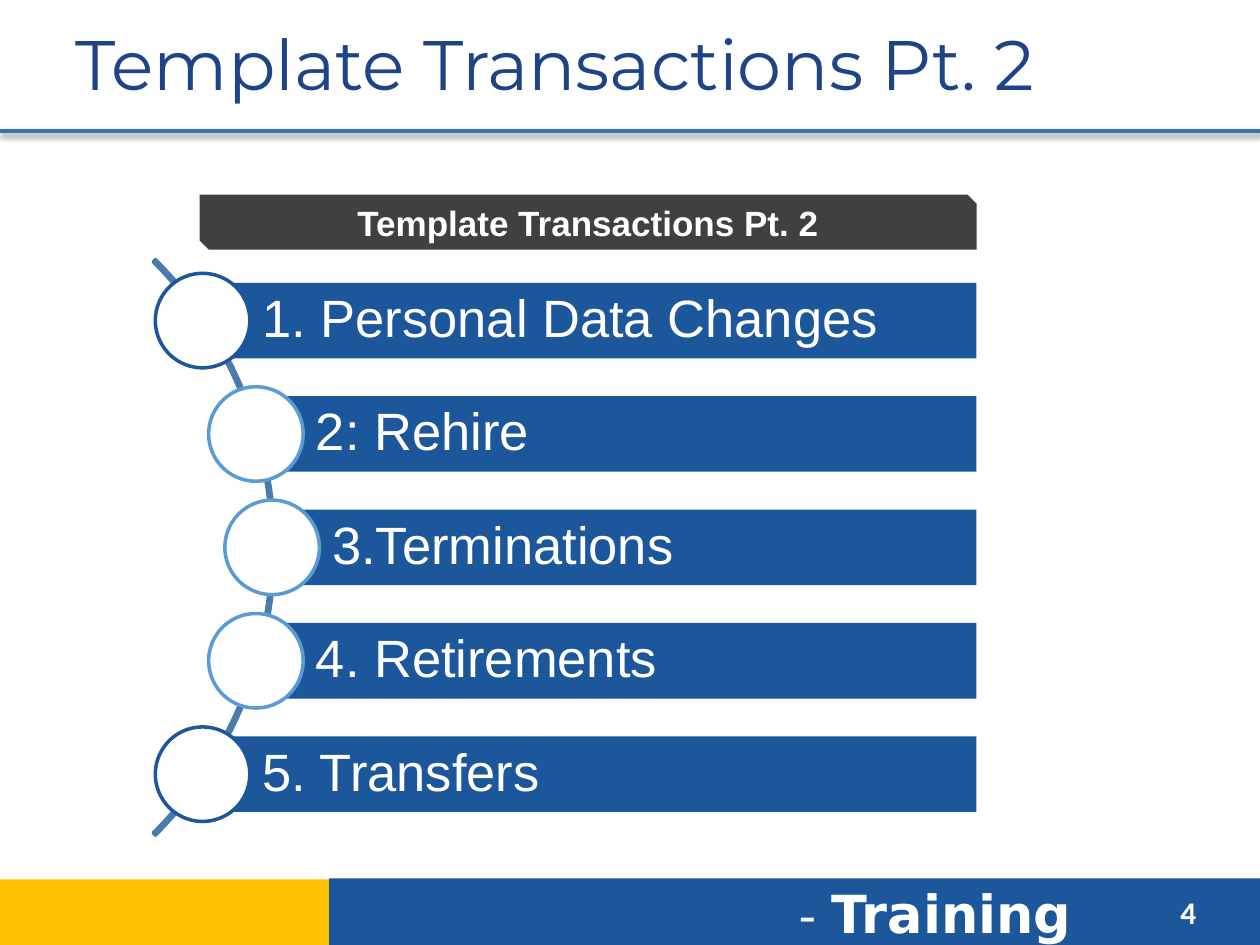
from math import sqrt

from lxml.etree import SubElement
from pptx import Presentation
from pptx.dml.color import RGBColor
from pptx.enum.shapes import MSO_CONNECTOR, MSO_SHAPE
from pptx.enum.text import MSO_ANCHOR, PP_ALIGN
from pptx.oxml.ns import qn
from pptx.util import Pt

TITLE = "Template Transactions Pt. 2"
TOPICS = [
    ("1. Personal Data Changes", "blue"),
    ("2: Rehire", "sky"),
    ("3.Terminations", "sky"),
    ("4. Retirements", "sky"),
    ("5. Transfers", "blue"),
]
FOOTER = [("- ", 28, False), ("Training", 30, True)]
PAGE = "4"
COLORS = {
    "blue": "1D579B",
    "sky": "5B9BD5",
    "arc": "497CAB",
    "rule": "2E75B5",
    "title": "1E4386",
    "gold": "FFC000",
    "heading": "404040",
    "white": "FFFFFF",
}

ARC_X, ARC_Y, ARC_RADIUS = -75.6, 312.8, 232.6
RING_RADIUS = 231.1
RING_SIZE = 54
BAR_HEIGHT, BAR_RIGHT, BAR_STEP = 43.2, 558, 64.8

prs = Presentation()
prs.slide_width, prs.slide_height = Pt(720), Pt(540)
slide = prs.slides.add_slide(prs.slide_layouts[6])


def color(name):
    return RGBColor.from_string(COLORS[name])


def add_block(preset, left, top, width, height, fill=None, line=None):
    block = slide.shapes.add_shape(preset, Pt(left), Pt(top), Pt(width), Pt(height))
    block.shadow.inherit = False
    if fill:
        block.fill.solid()
        block.fill.fore_color.rgb = color(fill)
    else:
        block.fill.background()
    if line:
        block.line.color.rgb = color(line)
        block.line.width = Pt(2)
    else:
        block.line.fill.background()
    return block


def add_label(left, top, width, height):
    return slide.shapes.add_textbox(Pt(left), Pt(top), Pt(width), Pt(height))


def write(holder, runs, font, ink, align=PP_ALIGN.LEFT, anchor=MSO_ANCHOR.MIDDLE):
    frame = holder.text_frame
    frame.word_wrap = True
    frame.vertical_anchor = anchor
    paragraph = frame.paragraphs[0]
    paragraph.alignment = align
    for words, size, bold in runs:
        run = paragraph.add_run()
        run.text = words
        run.font.name = font
        run.font.size = Pt(size)
        run.font.bold = bold
        run.font.color.rgb = color(ink)
    return frame


add_block(MSO_SHAPE.RECTANGLE, 188, 502, 532, 38, "blue")
add_block(MSO_SHAPE.RECTANGLE, 0, 502.5, 188, 37.5, "gold")
write(add_label(449.3, 499.7, 201.6, 43.9), FOOTER, "DejaVu Sans", "white",
      anchor=MSO_ANCHOR.TOP)
write(add_label(667.5, 506.9, 43.2, 28.8), [(PAGE, 18, True)], "Calibri", "white",
      anchor=MSO_ANCHOR.TOP)

rule = slide.shapes.add_connector(MSO_CONNECTOR.STRAIGHT, Pt(0), Pt(74.9), Pt(720), Pt(74.9))
rule.line.color.rgb = color("rule")
rule.line.width = Pt(2.25)
effects = SubElement(rule._element.spPr, qn("a:effectLst"))
shadow = SubElement(effects, qn("a:outerShdw"), blurRad=str(Pt(3.1)),
                    dist=str(Pt(1.6)), dir="5400000", rotWithShape="0")
shade = SubElement(shadow, qn("a:srgbClr"), val="000000")
SubElement(shade, qn("a:alpha"), val="38000")

write(add_label(36, 2.2, 648, 67), [(TITLE, 40, False)], "Montserrat", "title")

arc = add_block(MSO_SHAPE.BLOCK_ARC, ARC_X - ARC_RADIUS, ARC_Y - ARC_RADIUS,
                2 * ARC_RADIUS, 2 * ARC_RADIUS, line="arc")
for index, value in enumerate((189, 27, 0.004)):
    arc.adjustments[index] = value

for index, (topic, ring_color) in enumerate(TOPICS):
    offset = (index - len(TOPICS) // 2) * BAR_STEP
    x = ARC_X + sqrt(RING_RADIUS ** 2 - offset ** 2)
    y = ARC_Y + offset
    bar = add_block(MSO_SHAPE.RECTANGLE, x, y - BAR_HEIGHT / 2, BAR_RIGHT - x, BAR_HEIGHT, "blue")
    frame = write(bar, [(topic, 30, False)], "Arial", "white")
    frame.margin_left = Pt(34.3)
    frame.margin_top = frame.margin_right = frame.margin_bottom = Pt(5.8)
    frame.paragraphs[0].line_spacing = 0.9
    add_block(MSO_SHAPE.OVAL, x - RING_SIZE / 2, y - RING_SIZE / 2, RING_SIZE, RING_SIZE,
              "white", ring_color)

heading = add_block(MSO_SHAPE.SNIP_2_DIAG_RECTANGLE, 114, 111.2, 444, 31.4, "heading")
write(heading, [(TITLE, 20, True)], "Arial", "white", PP_ALIGN.CENTER)

prs.save("out.pptx")
